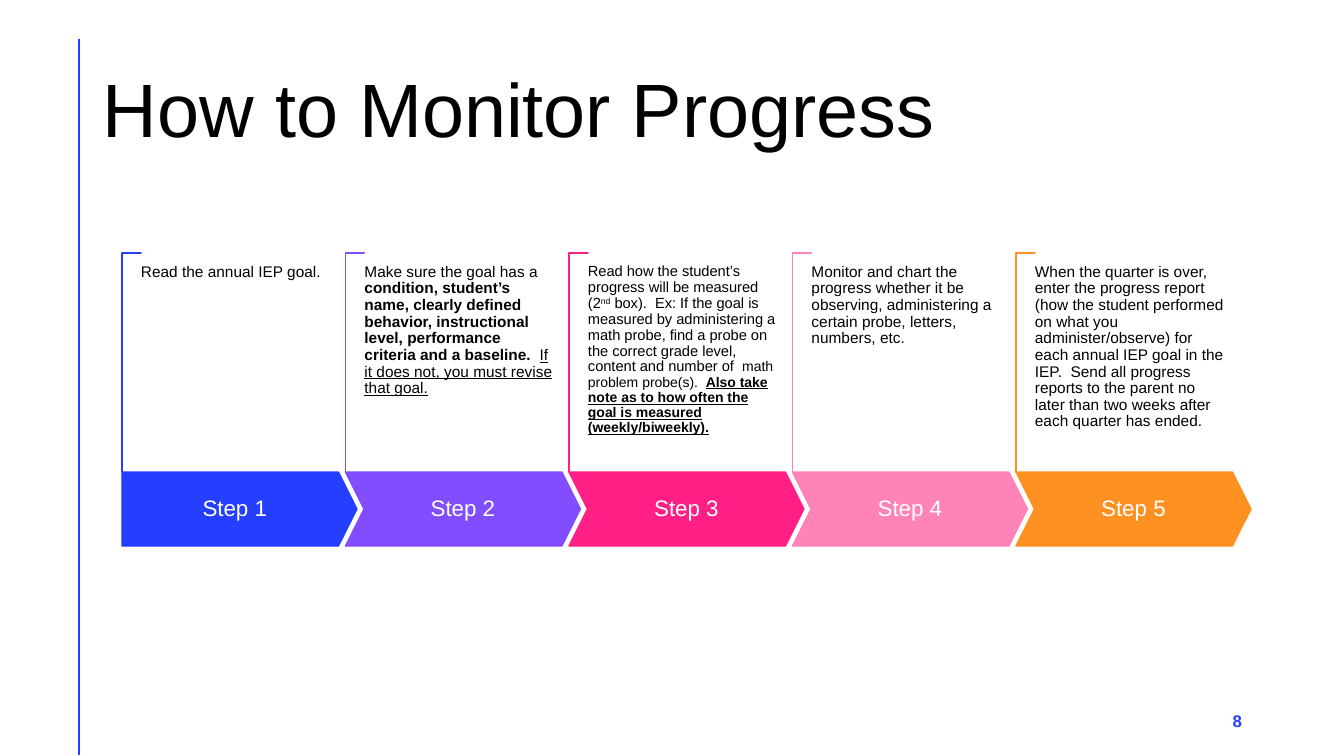
import pptx
import pptx.dml.color
import pptx.enum.shapes
import pptx.enum.text
import pptx.oxml.ns
import pptx.util
from lxml import etree

SHAPE = pptx.enum.shapes.MSO_SHAPE
ANCHOR = pptx.enum.text.MSO_ANCHOR
ALIGN = pptx.enum.text.PP_ALIGN

# Content: each step has a colour and runs of (text, font format)
TITLE = "How to Monitor Progress"
PAGE_NUMBER = "8"
BLUE, WHITE, BLACK = "243FFF", "FFFFFF", "000000"
BODY = {"size": 11}
SMALL = {"size": 10.5}
SMALLER = {"size": 10}
STEPS = [
    (BLUE, [("Read the annual IEP goal.", BODY)]),
    ("814DFF", [
        ("Make sure the goal has a ", BODY),
        ("condition, student’s name, clearly defined behavior, instructional level, "
         "performance criteria and a baseline.  ", {**BODY, "bold": True}),
        ("If it does not, you must revise that goal.", {**BODY, "underline": True}),
    ]),
    ("FF1F85", [
        ("Read how the student’s progress will be measured (2", SMALL),
        ("nd", {**SMALL, "baseline": 30000}),
        (" box).  Ex: If the goal is measured by administering a math probe, find a probe "
         "on the correct grade level, content and number of ", SMALL),
        (" math problem probe(s).  ", SMALLER),
        ("Also take note as to how often the goal is measured (weekly/biweekly).",
         {**SMALLER, "bold": True, "underline": True}),
    ]),
    ("FF83B6", [
        ("Monitor and chart the progress whether it be observing, administering a certain "
         "probe, letters, numbers, etc.", BODY),
    ]),
    ("FF9022", [
        ("When the quarter is over, enter the progress report (how the student performed on "
         "what you administer/observe) for each annual IEP goal in the IEP.  Send all progress "
         "reports to the parent no later than two weeks after each quarter has ended.", BODY),
    ]),
]

# Layout in px
SCALE = 914400 / 100.8
FIRST_LEFT, LAST_LEFT = 122, 1016
ARROW_TOP, ARROW_WIDTH, ARROW_HEIGHT = 472, 235, 74
BRACKET_TOP, BRACKET_WIDTH = 253, 19
BODY_TOP, BODY_WIDTH, BODY_HEIGHT = 264, 190, 154


def emu(*lengths):
    return [round(length * SCALE) for length in lengths]


def color(value):
    return pptx.dml.color.RGBColor.from_string(value)


def write(box, runs, ink, anchor, align=ALIGN.LEFT, spacing=0.9, inset=10):
    frame = box.text_frame
    margin = emu(inset)[0]
    settings = {"word_wrap": True, "vertical_anchor": anchor, "margin_left": margin,
                "margin_right": margin, "margin_top": 0, "margin_bottom": 0}
    for name, value in settings.items():
        setattr(frame, name, value)
    para = frame.paragraphs[0]
    para.alignment, para.line_spacing = align, spacing
    for text, formats in runs:
        span = para.add_run()
        span.text = text
        span.font.name = "Arial"
        span.font.color.rgb = color(ink)
        for name, value in formats.items():
            if name in ("baseline", "spc"):
                span._r.get_or_add_rPr().set(name, str(value))
            else:
                setattr(span.font, name, pptx.util.Pt(value) if name == "size" else value)


def add_shape(page, kind, bounds, fill, line, adjustments):
    shape = page.shapes.add_shape(kind, *emu(*bounds))
    shape.shadow.inherit = False
    shape.fill.solid()
    shape.fill.fore_color.rgb = color(fill)
    shape.line.color.rgb = color(line)
    shape.line.width = pptx.util.Pt(1)
    for index, value in enumerate(adjustments):
        shape.adjustments[index] = value
    return shape


def add_step(page, index, ink, runs):
    left = FIRST_LEFT + index * (LAST_LEFT - FIRST_LEFT) / (len(STEPS) - 1)

    # Bracket: a thin corner turned a quarter, so its length runs down the page
    length = ARROW_TOP - BRACKET_TOP
    bounds = (left + (BRACKET_WIDTH - length) / 2,
              BRACKET_TOP + (length - BRACKET_WIDTH) / 2, length, BRACKET_WIDTH)
    bracket = add_shape(page, SHAPE.CORNER, bounds, WHITE, ink, [0.01, 0.01])
    bracket.rotation = 90

    # Arrow with its label
    kind = SHAPE.CHEVRON if index else SHAPE.PENTAGON
    bounds = (left, ARROW_TOP, ARROW_WIDTH, ARROW_HEIGHT)
    arrow = add_shape(page, kind, bounds, ink, ink, [0.25])
    write(arrow, [(f"Step {index + 1}", {"size": 16})], WHITE, ANCHOR.MIDDLE, ALIGN.CENTER)

    # Description
    box = page.shapes.add_textbox(
        *emu(left + BRACKET_WIDTH, BODY_TOP, BODY_WIDTH, BODY_HEIGHT))
    write(box, runs, BLACK, ANCHOR.TOP, inset=0)


def main():
    deck = pptx.Presentation()
    deck.slide_width, deck.slide_height = emu(1344, 756)
    page = deck.slides.add_slide(deck.slide_layouts[6])

    # Side rule
    rule = page.shapes.add_connector(
        pptx.enum.shapes.MSO_CONNECTOR.STRAIGHT, *emu(79, 39, 79, 755))
    rule.line.color.rgb = color(BLUE)
    rule.line.width = pptx.util.Pt(2)
    etree.SubElement(rule._element.spPr, pptx.oxml.ns.qn("a:effectLst"))

    # Title
    title = page.shapes.add_textbox(*emu(93, 40, 1159, 146))
    write(title, [(TITLE, {"size": 54})], BLACK, ANCHOR.MIDDLE)

    # Steps
    for index, (ink, runs) in enumerate(STEPS):
        add_step(page, index, ink, runs)

    # Page number
    number = page.shapes.add_textbox(*emu(950, 701, 302, 40))
    write(number, [(PAGE_NUMBER, {"size": 12, "bold": True, "spc": 100})], BLUE,
          ANCHOR.MIDDLE, ALIGN.RIGHT, spacing=1.0)

    deck.save("out.pptx")


if __name__ == "__main__":
    main()
